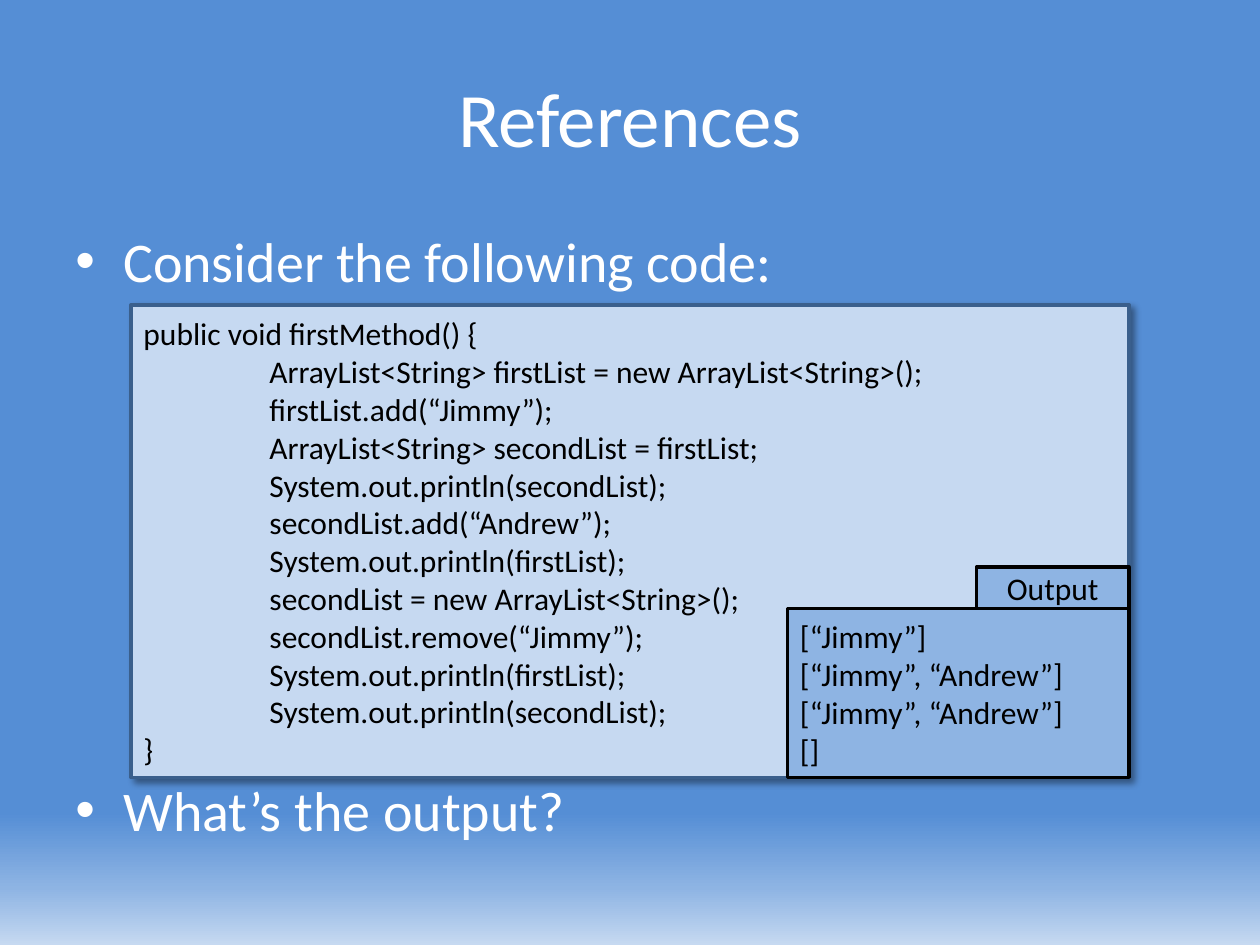
from lxml import etree
from pptx import Presentation
from pptx.dml.color import RGBColor
from pptx.enum.shapes import MSO_SHAPE
from pptx.enum.text import MSO_ANCHOR, PP_ALIGN
from pptx.oxml import parse_xml
from pptx.oxml.ns import nsdecls, qn
from pptx.util import Inches, Pt

RECT = MSO_SHAPE.RECTANGLE
MIDDLE, TOP = MSO_ANCHOR.MIDDLE, MSO_ANCHOR.TOP
CENTER, JUST, LEFT = PP_ALIGN.CENTER, PP_ALIGN.JUSTIFY, PP_ALIGN.LEFT

# Content
TITLE = "References"
BULLETS = [("Consider the following code:", 6.4), ("What’s the output?", 275)]
HEAD = "public void firstMethod() {"
BODY = [
    "ArrayList<String> firstList = new ArrayList<String>();",
    "firstList.add(“Jimmy”);",
    "ArrayList<String> secondList = firstList;",
    "System.out.println(secondList);",
    "secondList.add(“Andrew”);",
    "System.out.println(firstList);",
    "secondList = new ArrayList<String>();",
    "secondList.remove(“Jimmy”);",
    "System.out.println(firstList);",
    "System.out.println(secondList);",
]
CODE = [HEAD] + ["\t" + line for line in BODY] + ["}"]
OUTPUT = ["[“Jimmy”]", "[“Jimmy”, “Andrew”]", "[“Jimmy”, “Andrew”]", "[]"]
COLORS = {"sky": "558ED5", "mid": "8EB4E3", "pale": "C6D9F1",
          "edge": "3A5F8C", "white": "FFFFFF", "black": "000000"}
STOPS = [(86, "sky"), (94, "mid"), (100, "pale")]
RIGHT, BOTTOM = 8.96, 6.17  # shared corner of the code and output boxes


def color(name):
    return RGBColor.from_string(COLORS[name])


def write(shape, lines, size, ink, align, anchor):
    frame = shape.text_frame
    frame.word_wrap = True
    frame.vertical_anchor = anchor
    for i, line in enumerate(lines):
        para = frame.paragraphs[0] if i == 0 else frame.add_paragraph()
        para.text = line
        para.alignment = align
        para.font.name = "Calibri"
        para.font.size = Pt(size)
        para.font.color.rgb = color(ink)
    return frame.paragraphs


def add_text(slide, box, lines, size, align, anchor):
    shape = slide.shapes.add_textbox(*map(Inches, box))
    return write(shape, lines, size, "white", align, anchor)


def add_box(shapes, width, height, bottom, fill, line, lines, align=JUST):
    left, top = RIGHT - width, bottom - height
    box = shapes.add_shape(RECT, *map(Inches, (left, top, width, height)))
    box.shadow.inherit = False
    box.fill.solid()
    box.fill.fore_color.rgb = color(fill)
    box.line.color.rgb = color(line)
    box.line.width = Pt(2)
    write(box, lines, 18, "black", align, MIDDLE)
    return box


def add_props(para, *parts):
    props = para._p.get_or_add_pPr()
    for part in parts:
        props.find(qn("a:defRPr")).addprevious(parse_xml(part))
    return props


def add_bullet(para, space):
    para.space_before = Pt(space)
    props = add_props(para, f'<a:buFont {nsdecls("a")} typeface="Arial"/>',
                      f'<a:buChar {nsdecls("a")} char="•"/>')
    props.set("marL", str(Inches(0.38)))
    props.set("indent", str(-Inches(0.38)))


def add_tab(para):
    add_props(para, f'<a:tabLst {nsdecls("a")}>'
                    f'<a:tab pos="{Inches(1)}" algn="l"/></a:tabLst>')


def add_shadow(shape):
    effects = shape._element.spPr.find(qn("a:effectLst"))
    shadow = etree.SubElement(
        effects, qn("a:outerShdw"), blurRad=str(Pt(4)), dist=str(Pt(3)),
        dir=str(45 * 60000), algn="tl", rotWithShape="0")
    tint = etree.SubElement(shadow, qn("a:srgbClr"), val=COLORS["black"])
    etree.SubElement(tint, qn("a:alpha"), val="40000")


def set_back(slide):
    fill = slide.background.fill
    fill.gradient()
    fill.gradient_angle = 270
    stops = slide.element.xpath(".//p:bg//a:gsLst")[0]
    for old in list(stops):
        stops.remove(old)
    for pos, name in STOPS:
        stop = etree.SubElement(stops, qn("a:gs"), pos=str(pos * 1000))
        etree.SubElement(stop, qn("a:srgbClr"), val=COLORS[name])


def main():
    deck = Presentation()
    deck.slide_width, deck.slide_height = Inches(10), Inches(7.5)
    slide = deck.slides.add_slide(deck.slide_layouts[6])
    set_back(slide)

    # Title and bullets
    add_text(slide, (0.5, 0.3, 9, 1.25), [TITLE], 44, CENTER, MIDDLE)
    texts = [text for text, space in BULLETS]
    paras = add_text(slide, (0.5, 1.75, 9, 5.33), texts, 32, LEFT, TOP)
    for para, (text, space) in zip(paras, BULLETS):
        add_bullet(para, space)

    # Code listing
    code = add_box(slide.shapes, 7.92, 3.75, BOTTOM, "pale", "edge", CODE)
    add_shadow(code)
    for para in code.text_frame.paragraphs:
        add_tab(para)

    # Output panel with its tab on top
    panel = slide.shapes.add_group_shape().shapes
    high = 1.34
    add_box(panel, 2.71, high, BOTTOM, "mid", "black", OUTPUT)
    add_box(panel, 1.21, 0.33, BOTTOM - high, "mid", "black", ["Output"], CENTER)

    deck.save("out.pptx")


if __name__ == "__main__":
    main()
